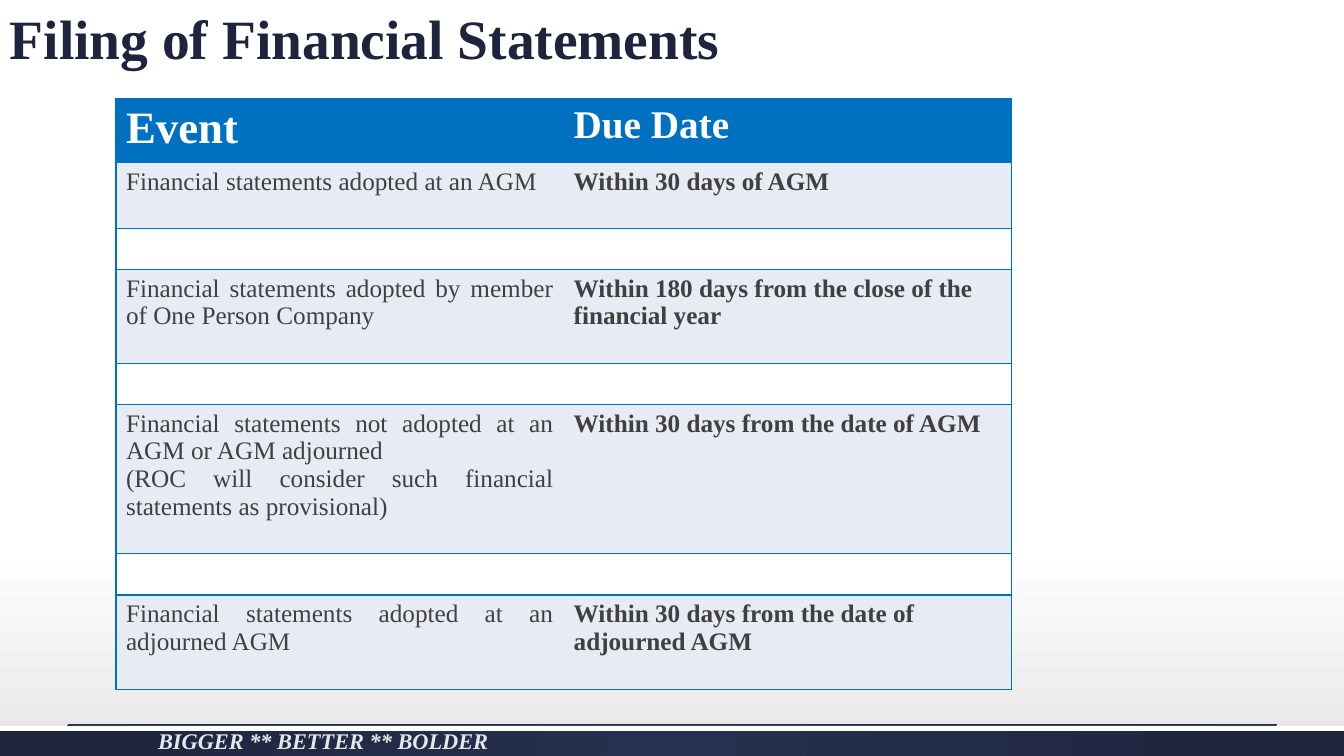
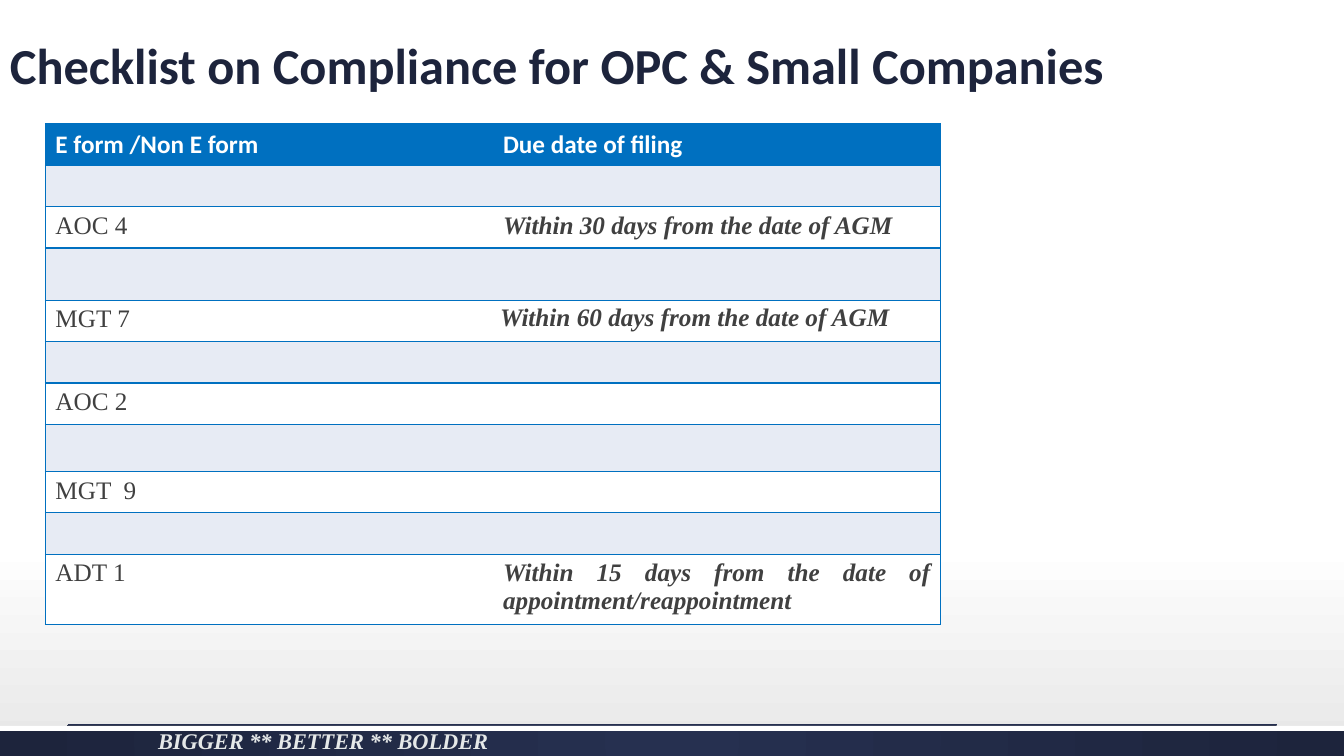
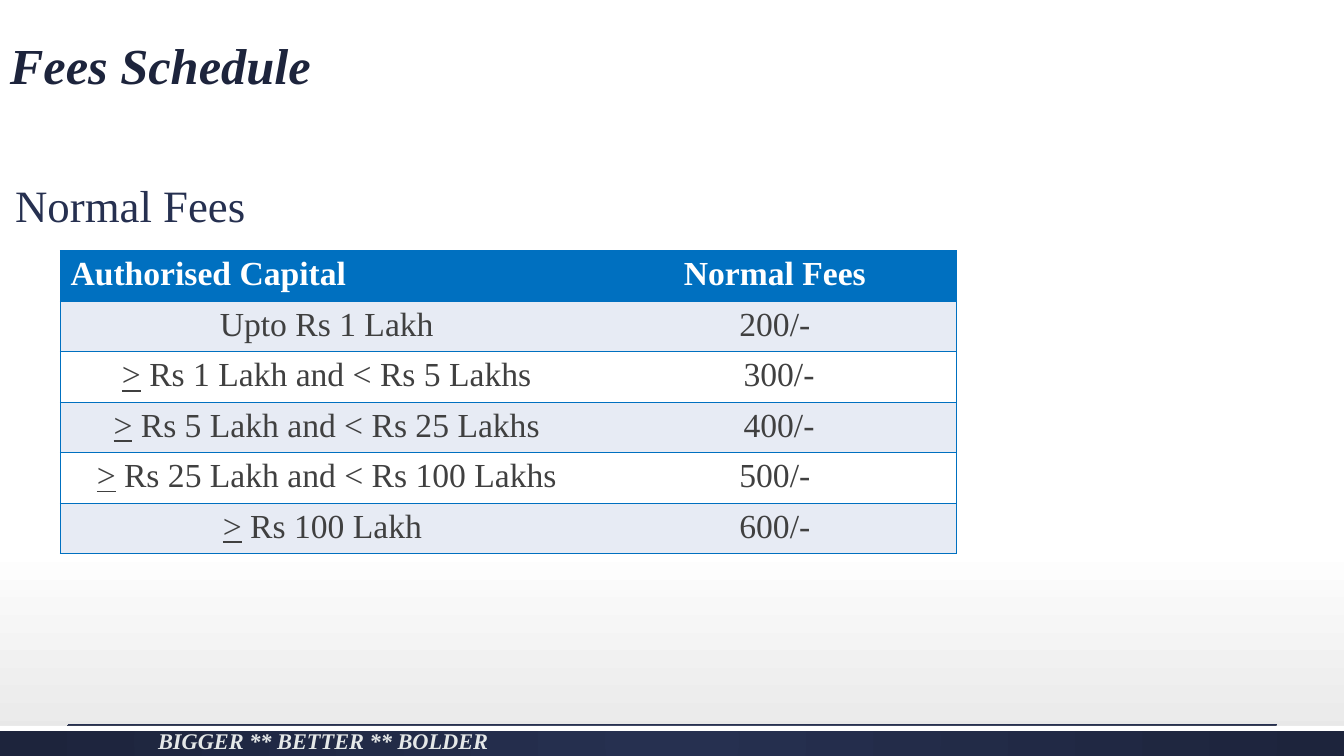
from lxml.etree import SubElement
from pptx import Presentation
from pptx.dml.color import RGBColor
from pptx.enum.shapes import MSO_CONNECTOR, MSO_SHAPE
from pptx.enum.text import MSO_ANCHOR, PP_ALIGN
from pptx.oxml import parse_xml
from pptx.oxml.ns import nsdecls, qn
from pptx.util import Inches, Pt

NAVY = RGBColor(0x1D, 0x24, 0x3C)
INDIGO = RGBColor(0x26, 0x30, 0x50)
BLUE = RGBColor(0x00, 0x70, 0xC0)
PALE = RGBColor(0xE7, 0xEB, 0xF4)
GREY = RGBColor(0xE6, 0xE6, 0xE6)
MIST = RGBColor(0xE5, 0xE8, 0xE8)
TEXT = RGBColor(0x40, 0x40, 0x40)
WHITE = RGBColor(0xFF, 0xFF, 0xFF)
SERIF = "Times New Roman"
SANS = "Calibri"
LEFT, CENTER, JUSTIFY = PP_ALIGN.LEFT, PP_ALIGN.CENTER, PP_ALIGN.JUSTIFY

PAGES = [
    {
        "title": "Filing of Financial Statements",
        "title_style": (39.6, SERIF, False),
        "title_height": 0.76,
        "place": (1.15, 0.98),
        "widths": (4.44, 4.44),
        "heights": (0.6, 0.65, 0.41, 0.93, 0.41, 1.48, 0.41, 0.94),
        "head_font": SERIF,
        "head_sizes": (32, 28),
        "head_aligns": (LEFT, LEFT),
        "size": 18,
        "aligns": (JUSTIFY, LEFT),
        "bold": (False, True),
        "italic": (False, False),
        "rows": [
            ("Event", "Due Date"),
            ("Financial statements adopted at an AGM", "Within 30 days of AGM"),
            ("", ""),
            ("Financial statements adopted by member of One Person Company",
             "Within 180 days from the close of the financial year"),
            ("", ""),
            ("Financial statements not adopted at an AGM or AGM adjourned\n"
             "(ROC will consider such financial statements as provisional)",
             "Within 30 days from the date of AGM"),
            ("", ""),
            ("Financial statements adopted at an adjourned AGM",
             "Within 30 days from the date of adjourned AGM"),
        ],
    },
    {
        "title": "Checklist on Compliance for OPC & Small Companies",
        "title_style": (36, SANS, False),
        "title_height": 1,
        "place": (0.45, 1.23),
        "widths": (4.44, 4.44),
        "heights": (0.41, 0.41, 0.41, 0.52, 0.41, 0.41, 0.41, 0.47, 0.41, 0.41, 0.65),
        "head_font": SANS,
        "head_sizes": (18, 18),
        "head_aligns": (LEFT, LEFT),
        "size": 18,
        "aligns": (LEFT, JUSTIFY),
        "bold": (False, True),
        "italic": (False, True),
        "rows": [
            ("E form /Non E form", "Due date of filing"),
            ("", ""),
            ("AOC 4", "Within 30 days from the date of AGM"),
            ("", ""),
            ("MGT 7", "Within 60 days from the date of AGM"),
            ("", ""),
            ("AOC 2", ""),
            ("", ""),
            ("MGT  9", ""),
            ("", ""),
            ("ADT 1", "Within 15 days from the date of appointment/reappointment"),
        ],
    },
    {
        "title": "Fees Schedule",
        "title_style": (36, SERIF, True),
        "title_height": 1,
        "place": (0.6, 2.49),
        "widths": (5.28, 3.61),
        "heights": (0.47,) * 6,
        "head_font": SERIF,
        "head_sizes": (24, 24),
        "head_aligns": (LEFT, CENTER),
        "size": 24,
        "aligns": (CENTER, CENTER),
        "bold": (False, False),
        "italic": (False, False),
        "rows": [
            ("Authorised Capital", "Normal Fees"),
            ("Upto Rs 1 Lakh", "200/-"),
            ("> Rs 1 Lakh and < Rs 5 Lakhs", " 300/-"),
            ("> Rs 5 Lakh and < Rs 25 Lakhs", " 400/-"),
            ("> Rs 25 Lakh and < Rs 100 Lakhs", "500/-"),
            ("> Rs 100 Lakh ", "600/-"),
        ],
    },
]


def style_text(frame, size, name, color, bold=False, italic=False, align=LEFT):
    for para in frame.paragraphs:
        para.alignment = align
        for span in para.runs:
            span.font.size = Pt(size)
            span.font.name = name
            span.font.color.rgb = color
            span.font.bold = bold
            span.font.italic = italic


def add_text(page, place, text, anchor, *style):
    box = page.shapes.add_textbox(*map(Inches, place))
    frame = box.text_frame
    frame.word_wrap = True
    frame.vertical_anchor = anchor
    frame.text = text
    style_text(frame, *style)
    return frame


deck = Presentation()
deck.slide_width = Inches(13.33)
deck.slide_height = Inches(7.5)

backdrop = deck.slide_master.background.fill
backdrop.gradient()
backdrop.gradient_angle = 270
for stop, position, color in zip(backdrop.gradient_stops, (0.72, 1), (WHITE, GREY)):
    stop.position = position
    stop.color.rgb = color

for content in PAGES:
    page = deck.slides.add_slide(deck.slide_layouts[6])

    band = page.shapes.add_shape(
        MSO_SHAPE.RECTANGLE, 0, Inches(7.2), deck.slide_width, Inches(0.3))
    band.fill.gradient()
    for stop, position, color in zip(band.fill.gradient_stops, (0, 1), (INDIGO, NAVY)):
        stop.position = position
        stop.color.rgb = color
    gradient = band.element.spPr.find(qn("a:gradFill"))
    gradient.remove(gradient.find(qn("a:lin")))
    gradient.append(parse_xml(
        f'<a:path {nsdecls("a")} path="circle">'
        '<a:fillToRect l="50000" t="50000" r="50000" b="50000"/></a:path>'))

    stripe = page.shapes.add_shape(
        MSO_SHAPE.RECTANGLE, 0, Inches(7.2), deck.slide_width, Inches(0.05))
    stripe.fill.solid()
    stripe.fill.fore_color.rgb = WHITE
    for shape in (band, stripe):
        shape.line.fill.background()
        shape.shadow.inherit = False

    rule = page.shapes.add_connector(
        MSO_CONNECTOR.STRAIGHT, Inches(0.67), Inches(7.19), Inches(12.67), Inches(7.19))
    rule.line.color.rgb = INDIGO
    rule.line.width = Pt(0.75)
    SubElement(rule.element.spPr, qn("a:effectLst"))

    size, name, italic = content["title_style"]
    title = add_text(page, (0, 0, 12.22, content["title_height"]), content["title"],
                     MSO_ANCHOR.BOTTOM, size, name, NAVY, True, italic)
    title.paragraphs[0].line_spacing = 0.9
    add_text(page, (1.47, 7.22, 7.83, 0.26), "BIGGER ** BETTER ** BOLDER",
             MSO_ANCHOR.MIDDLE, 16, SERIF, MIST, True, True)

    rows, widths, heights = content["rows"], content["widths"], content["heights"]
    left, top = content["place"]
    table = page.shapes.add_table(
        len(rows), len(widths), Inches(left), Inches(top),
        Inches(sum(widths)), Inches(sum(heights))).table
    table.first_row = False
    table.horz_banding = False
    for column, width in zip(table.columns, widths):
        column.width = Inches(width)
    for r, (row, height) in enumerate(zip(rows, heights)):
        table.rows[r].height = Inches(height)
        for c, text in enumerate(row):
            cell = table.cell(r, c)
            cell.fill.solid()
            cell.fill.fore_color.rgb = BLUE if r == 0 else PALE if r % 2 else WHITE
            outer = "lnL" if c == 0 else "lnR"
            for position, side in enumerate(("lnL", "lnR", "lnT", "lnB")):
                drawn = side in (outer, "lnT", "lnB")
                paint = (f'<a:solidFill><a:srgbClr val="{BLUE}"/></a:solidFill>'
                         if drawn else "<a:noFill/>")
                cell._tc.get_or_add_tcPr().insert(position, parse_xml(
                    f'<a:{side} {nsdecls("a")} w="12700">{paint}</a:{side}>'))

            frame = cell.text_frame
            if text.startswith(">"):
                para = frame.paragraphs[0]
                para.text = ">"
                para.runs[0].font.underline = True
                para.add_run().text = text[1:]
            elif text:
                frame.text = text
            if r == 0:
                style_text(frame, content["head_sizes"][c], content["head_font"],
                           WHITE, True, False, content["head_aligns"][c])
            else:
                style_text(frame, content["size"], SERIF, TEXT, content["bold"][c],
                           content["italic"][c], content["aligns"][c])
            if text.startswith("Within 60"):
                cell.margin_left = cell.margin_right = Inches(0.07)
                cell.margin_top = cell.margin_bottom = 0
                frame.paragraphs[0].line_spacing = 1.15

subtitle = add_text(page, (0, 1.07, 12.36, 5.12), "Normal Fees",
                    MSO_ANCHOR.TOP, 32, SERIF, INDIGO)
subtitle.margin_left = Inches(0.15)
subtitle.margin_top = Inches(0.75)
subtitle.paragraphs[0].line_spacing = 0.9

deck.save("out.pptx")
